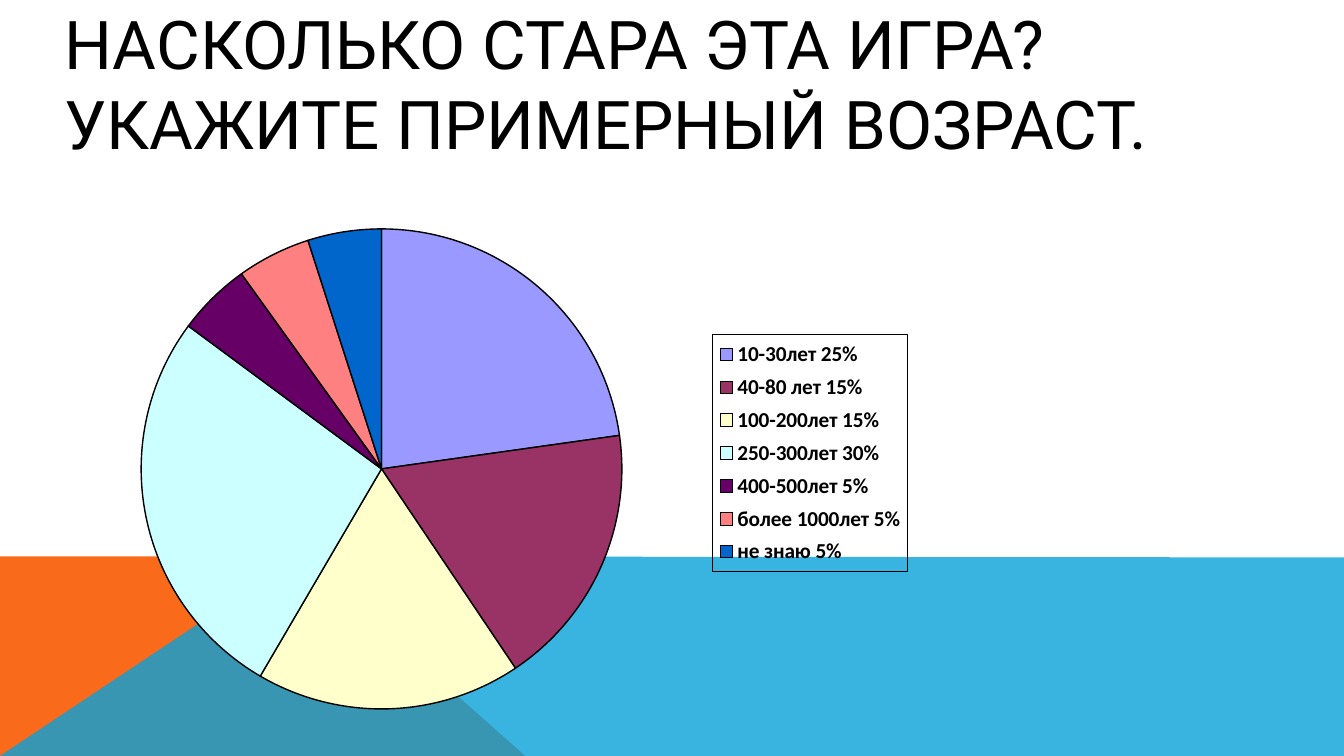
from lxml import etree
from pptx import Presentation
from pptx.chart.data import CategoryChartData
from pptx.dml.color import RGBColor
from pptx.enum.chart import XL_CHART_TYPE, XL_LEGEND_POSITION
from pptx.enum.text import MSO_ANCHOR, MSO_AUTO_SIZE, PP_ALIGN
from pptx.oxml import parse_xml
from pptx.oxml.ns import qn
from pptx.util import Inches, Pt

PIE = XL_CHART_TYPE.PIE
RIGHT = XL_LEGEND_POSITION.RIGHT
MIDDLE = MSO_ANCHOR.MIDDLE
FIXED = MSO_AUTO_SIZE.NONE
LEFT = PP_ALIGN.LEFT
CHART_NS = "http://schemas.openxmlformats.org/drawingml/2006/chart"
DRAW_NS = "http://schemas.openxmlformats.org/drawingml/2006/main"

TITLE = "НАСКОЛЬКО СТАРА ЭТА ИГРА? УКАЖИТЕ ПРИМЕРНЫЙ ВОЗРАСТ."
AGES = [
    ("10-30лет 25%", 23, "9999FF"),
    ("40-80 лет 15%", 18, "993366"),
    ("100-200лет 15%", 18, "FFFFCC"),
    ("250-300лет 30%", 27, "CCFFFF"),
    ("400-500лет 5%", 5, "660066"),
    ("более 1000лет 5%", 5, "FF8080"),
    ("не знаю 5%", 5, "0066CC"),
]
BANDS = [
    ([(0, 7.5), (0, 5.52), (2.98, 5.52), (5.21, 7.5)], "F96A1B", 100),
    ([(0, 7.5), (2.97, 5.52), (13.33, 5.53), (13.33, 7.5)], "08A1D9", 80),
]


def color(code):
    """Turn a hex string into a colour."""
    return RGBColor.from_string(code)


def style(item, values):
    """Set each attribute named in a dict."""
    for name, value in values.items():
        setattr(item, name, value)


def set_font(font, name, size, bold):
    """Format a font in black."""
    style(font, {"name": name, "size": Pt(size), "bold": bold})
    font.color.rgb = color("000000")


def add_band(slide, index, points, code, alpha):
    """Draw a floor band behind the other shapes."""
    spots = [(Inches(x), Inches(y)) for x, y in points]
    build = slide.shapes.build_freeform(*spots[0])
    build.add_line_segments(spots[1:], close=True)
    band = build.convert_to_shape()
    band.shadow.inherit = False
    band.fill.solid()
    band.fill.fore_color.rgb = color(code)
    band.line.fill.background()
    if alpha < 100:
        fill = band.fill._xPr.find(qn("a:solidFill"))
        etree.SubElement(fill[0], qn("a:alpha"), val=str(alpha * 1000))
    slide.shapes._spTree.insert(2 + index, band._element)


def add_title(slide):
    """Fill and place the title."""
    title = slide.shapes.title
    style(title, {"left": Inches(0.54), "top": Inches(0.56),
                  "width": Inches(12), "height": Inches(1.25)})
    frame = title.text_frame
    style(frame, {"text": TITLE, "word_wrap": True, "auto_size": FIXED,
                  "vertical_anchor": MIDDLE, "margin_bottom": Inches(0.78)})
    para = frame.paragraphs[0]
    para.alignment = LEFT
    set_font(para.runs[0].font, "Roboto", 48, False)


def layout(x, y, wide, high, inner=False):
    """Build a manual chart layout from shares of the chart."""
    target = '<c:layoutTarget val="inner"/>' if inner else ""
    return parse_xml(
        f'<c:layout xmlns:c="{CHART_NS}"><c:manualLayout>{target}'
        '<c:xMode val="edge"/><c:yMode val="edge"/>'
        f'<c:x val="{x}"/><c:y val="{y}"/><c:w val="{wide}"/><c:h val="{high}"/>'
        "</c:manualLayout></c:layout>")


def add_legend(chart):
    """Place a framed legend to the right of the pie."""
    chart.has_legend = True
    legend = chart.legend
    style(legend, {"position": RIGHT, "include_in_layout": False})
    set_font(legend.font, "Calibri", 15.2, True)
    node = legend._element
    for old in node.findall(qn("c:layout")):
        node.remove(old)
    node.find(qn("c:legendPos")).addnext(layout(0.6, 0.29, 0.18, 0.45))
    frame = parse_xml(
        f'<c:spPr xmlns:c="{CHART_NS}" xmlns:a="{DRAW_NS}"><a:noFill/>'
        '<a:ln w="9525"><a:solidFill><a:srgbClr val="000000"/></a:solidFill></a:ln>'
        "</c:spPr>")
    node.find(qn("c:txPr")).addprevious(frame)


def add_pie(slide):
    """Add the pie of answers."""
    data = CategoryChartData()
    data.categories = [name for name, _, _ in AGES]
    data.add_series("Series 1", [value for _, value, _ in AGES])
    chart = slide.shapes.add_chart(PIE, Inches(0.61), Inches(1.8), Inches(10.76),
                                   Inches(5.24), data).chart
    chart.has_title = False
    set_font(chart.font, "Calibri", 16.5, True)
    plot = chart.plots[0]
    plot.vary_by_categories = True
    for index, (_, _, code) in enumerate(AGES):
        form = plot.series[0].points[index].format
        form.fill.solid()
        form.fill.fore_color.rgb = color(code)
        form.line.color.rgb = color("000000")
        form.line.width = Pt(1)
    area = chart._chartSpace.chart.plotArea
    for old in area.findall(qn("c:layout")):
        area.remove(old)
    area.insert(0, layout(0.06, 0.09, 0.47, 0.91, inner=True))
    add_legend(chart)


def main():
    """Build and save the slide."""
    deck = Presentation()
    style(deck, {"slide_width": Inches(13.33), "slide_height": Inches(7.5)})
    slide = deck.slides.add_slide(deck.slide_layouts[5])
    for index, band in enumerate(BANDS):
        add_band(slide, index, *band)
    add_title(slide)
    add_pie(slide)
    deck.save("out.pptx")


if __name__ == "__main__":
    main()
